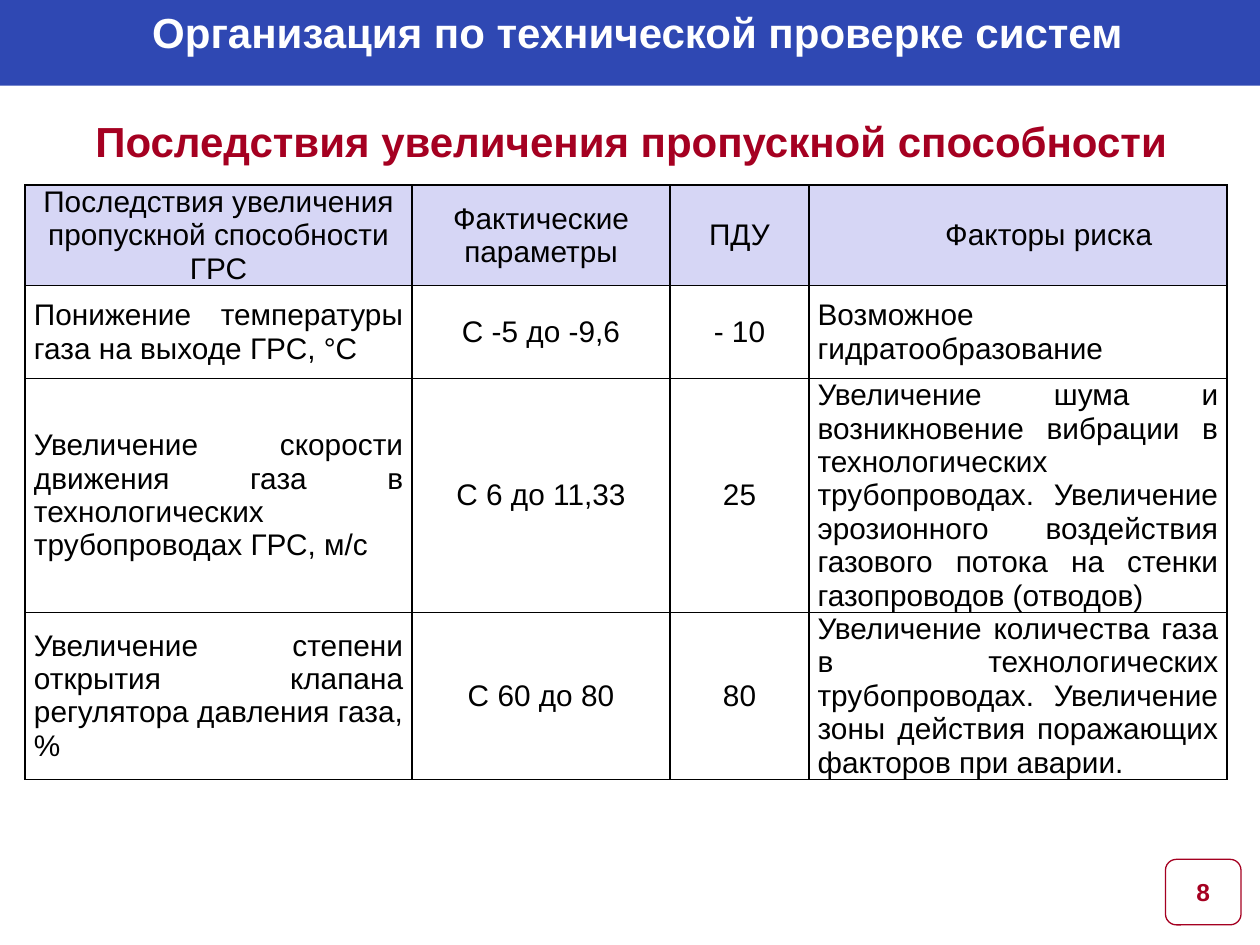
from lxml import etree
from pptx import Presentation
from pptx import util as u
from pptx.dml.color import RGBColor
from pptx.enum import shapes, text
from pptx.oxml import ns

Inches = u.Inches
COLORS = {
    "band": "2F48B3",
    "accent": "A50021",
    "header": "D6D6F5",
    "white": "FFFFFF",
    "black": "000000",
}
CENTER = text.PP_ALIGN.CENTER
JUSTIFY = text.PP_ALIGN.JUSTIFY
COLUMN_WIDTHS = [3.07, 2.05, 1.1, 3.32]
COLUMN_ALIGNS = [JUSTIFY, CENTER, CENTER, JUSTIFY]
ROW_HEIGHT = 0.74
ROWS = [
    ["Последствия увеличения пропускной способности ГРС",
     "Фактические параметры", "ПДУ", "Факторы риска"],
    ["Понижение температуры газа на выходе ГРС, °С",
     "С -5 до -9,6", "- 10", "Возможное гидратообразование"],
    ["Увеличение скорости движения газа в технологических трубопроводах ГРС, м/с",
     "С 6 до 11,33", "25",
     "Увеличение шума и возникновение вибрации в технологических трубопроводах. "
     "Увеличение эрозионного воздействия газового потока на стенки "
     "газопроводов (отводов)"],
    ["Увеличение степени открытия клапана регулятора давления газа, %",
     "С 60 до 80", "80",
     "Увеличение количества газа в технологических трубопроводах. "
     "Увеличение зоны действия поражающих факторов при аварии."],
]


def color(name):
    return RGBColor.from_string(COLORS[name])


def place(shape, box):
    shape.left, shape.top, shape.width, shape.height = map(Inches, box)


def write(frame, content, size, ink="black", bold=False, align=CENTER,
          margin=0, indent=0, bullet=True):
    """Fill a text frame with one formatted paragraph."""
    frame.word_wrap = True
    paragraph = frame.paragraphs[0]
    properties = paragraph._p.get_or_add_pPr()
    if not bullet:
        etree.SubElement(properties, ns.qn("a:buNone"))
    properties.set("marL", str(Inches(margin)))
    properties.set("indent", str(Inches(indent)))
    paragraph.alignment = align
    paragraph.space_before = u.Pt(0)
    run = paragraph.add_run()
    run.text = content
    run.font.name = "Arial"
    run.font.size = u.Pt(size)
    run.font.bold = bold
    run.font.color.rgb = color(ink)


def add_band(slide, box):
    band = slide.shapes.add_shape(shapes.MSO_SHAPE.RECTANGLE, *map(Inches, box))
    band.shadow.inherit = False
    band.fill.solid()
    band.fill.fore_color.rgb = color("band")
    band.line.fill.background()
    band.element.getparent().insert(2, band.element)


def fill_placeholder(placeholder, box, anchor, content, **style):
    place(placeholder, box)
    frame = placeholder.text_frame
    frame.auto_size = text.MSO_AUTO_SIZE.NONE
    frame.vertical_anchor = anchor
    write(frame, content, 24, bold=True, **style)


def add_page_number(slide, box, number):
    badge = slide.shapes.add_shape(
        shapes.MSO_SHAPE.ROUNDED_RECTANGLE, *map(Inches, box))
    badge.shadow.inherit = False
    badge.fill.background()
    badge.line.color.rgb = color("accent")
    badge.line.width = u.Pt(0.75)
    badge.text_frame.vertical_anchor = text.MSO_ANCHOR.MIDDLE
    write(badge.text_frame, number, 14, ink="accent", bold=True)


def set_borders(cell):
    properties = cell._tc.get_or_add_tcPr()
    for position, side in enumerate(("lnL", "lnR", "lnT", "lnB")):
        line = etree.Element(ns.qn("a:" + side), w=str(u.Pt(1)))
        fill = etree.SubElement(line, ns.qn("a:solidFill"))
        etree.SubElement(fill, ns.qn("a:srgbClr"), val=COLORS["black"])
        properties.insert(position, line)


def add_risk_table(slide, left, top):
    box = (left, top, sum(COLUMN_WIDTHS), ROW_HEIGHT * len(ROWS))
    table = slide.shapes.add_table(
        len(ROWS), len(COLUMN_WIDTHS), *map(Inches, box)).table
    table.first_row = table.horz_banding = False
    for column, width in zip(table.columns, COLUMN_WIDTHS):
        column.width = Inches(width)
    for i, row in enumerate(ROWS):
        for j, content in enumerate(row):
            cell = table.cell(i, j)
            cell.margin_left = cell.margin_right = Inches(0.07)
            cell.margin_top = cell.margin_bottom = 0
            cell.vertical_anchor = text.MSO_ANCHOR.MIDDLE
            cell.fill.solid()
            cell.fill.fore_color.rgb = color("white" if i else "header")
            set_borders(cell)
            last_heading = i == 0 and j == len(row) - 1
            write(cell.text_frame, content, 17,
                  align=COLUMN_ALIGNS[j] if i else CENTER,
                  indent=0.49 if last_heading else 0)


def main():
    presentation = Presentation()
    presentation.slide_width = Inches(10)
    presentation.slide_height = Inches(7.5)
    slide = presentation.slides.add_slide(presentation.slide_layouts[1])
    add_band(slide, (0, 0, 10, 0.68))
    fill_placeholder(slide.shapes.title, (0.2, 0.84, 9.62, 0.55),
                     text.MSO_ANCHOR.MIDDLE,
                     "Последствия увеличения пропускной способности",
                     ink="accent")
    fill_placeholder(slide.placeholders[1], (0.12, 0, 9.88, 0.68),
                     text.MSO_ANCHOR.TOP,
                     "Организация по технической проверке систем",
                     ink="white", margin=0.38, indent=-0.38, bullet=False)
    add_page_number(slide, (9.25, 6.82, 0.6, 0.52), "8")
    add_risk_table(slide, 0.2, 1.47)
    presentation.save("out.pptx")


if __name__ == "__main__":
    main()
